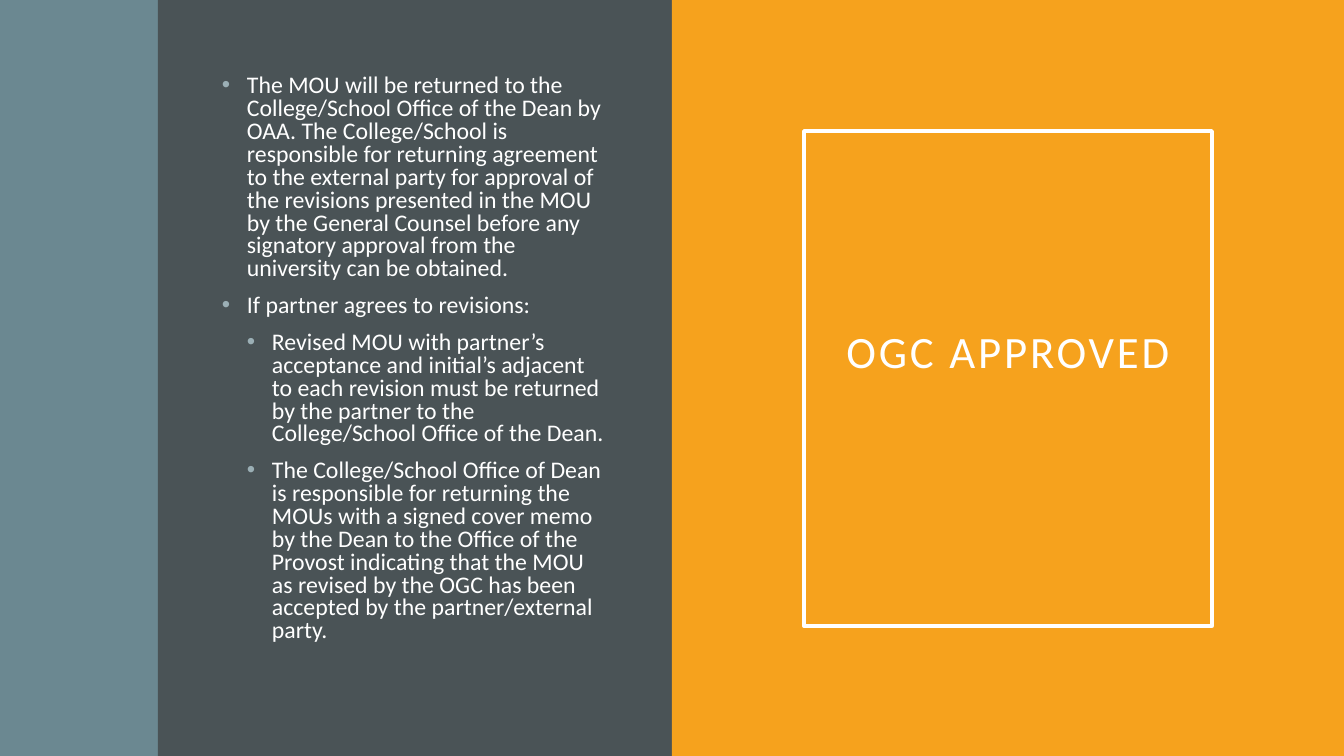
from dataclasses import dataclass

from lxml.etree import SubElement
from pptx import Presentation
from pptx.dml.color import RGBColor as Color
from pptx.enum.shapes import MSO_SHAPE as Shape
from pptx.enum.text import MSO_ANCHOR as Anchor, MSO_AUTO_SIZE as AutoSize, PP_ALIGN as Align
from pptx.oxml.ns import qn
from pptx.util import Pt

PX = 12192000 / 1344


@dataclass(frozen=True)
class Theme:
    font: str = "Calibri"
    teal: str = "6B8891"
    slate: str = "4A5356"
    orange: str = "F6A21D"
    bullet: str = "9BAFB5"
    white: str = "FFFFFF"
    title_size: int = 32
    body_size: int = 17


theme = Theme()


def px(*lengths):
    return [round(length * PX) for length in lengths]


def set_font(para, size):
    para.font.name = theme.font
    para.font.size = Pt(size)
    para.font.color.rgb = Color.from_string(theme.white)


deck = Presentation()
deck.slide_width, deck.slide_height = px(1344, 756)
page = deck.slides.add_slide(deck.slide_layouts[5])
page.background.fill.solid()
page.background.fill.fore_color.rgb = Color.from_string(theme.slate)

panels = [(0, 158, theme.teal), (158, 672, theme.slate), (672, 1344, theme.orange)]
for left, right, color in panels:
    panel = page.shapes.add_shape(Shape.RECTANGLE, *px(left, 0, right - left, 756))
    panel.shadow.inherit = False
    panel.fill.solid()
    panel.fill.fore_color.rgb = Color.from_string(color)
    panel.line.fill.background()

steps = [
    (0, "The MOU will be returned to the College/School Office of the Dean by OAA. "
        "The College/School is responsible for returning agreement to the external party "
        "for approval of the revisions presented in the MOU by the General Counsel before "
        "any signatory approval from the university can be obtained."),
    (0, "If partner agrees to revisions:"),
    (1, "Revised MOU with partner’s acceptance and initial’s adjacent to each revision must "
        "be returned by the partner to the College/School Office of the Dean."),
    (1, "The College/School Office of Dean is responsible for returning the MOUs with a signed "
        "cover memo by the Dean to the Office of the Provost indicating that the MOU as revised "
        "by the OGC has been accepted by the partner/external party."),
]
body = page.shapes.add_textbox(*px(212, 72, 408, 575))
frame = body.text_frame
frame.word_wrap = True
frame.vertical_anchor = Anchor.MIDDLE
indent, = px(25)
for index, (level, text) in enumerate(steps):
    para = frame.paragraphs[0] if index == 0 else frame.add_paragraph()
    para.text = text
    para.level = level
    para.line_spacing = 0.8
    para.space_before = Pt(10)
    props = para._p.get_or_add_pPr()
    props.set("marL", str(indent * (level + 1)))
    props.set("indent", str(-indent))
    bullet_color = SubElement(props, qn("a:buClr"))
    SubElement(bullet_color, qn("a:srgbClr"), val=theme.bullet)
    SubElement(props, qn("a:buFont"), typeface="Arial")
    SubElement(props, qn("a:buChar"), char="•")
    set_font(para, theme.body_size)

title = page.shapes.title
title.left, title.top, title.width, title.height = px(804, 131, 408, 495)
title.element.getparent().append(title.element)
title.fill.background()
title.line.color.rgb = Color.from_string(theme.white)
title.line.width = Pt(2.5)
frame = title.text_frame
frame.text = "OGC APPROVED"
frame.word_wrap = True
frame.auto_size = AutoSize.NONE
frame.vertical_anchor = Anchor.MIDDLE
frame.margin_left, frame.margin_top, frame.margin_right, frame.margin_bottom = px(20, 20, 20, 69)
heading = frame.paragraphs[0]
heading.alignment = Align.CENTER
heading.line_spacing = 0.9
set_font(heading, theme.title_size)
heading._p.pPr.find(qn("a:defRPr")).set("spc", "200")

deck.save("out.pptx")
